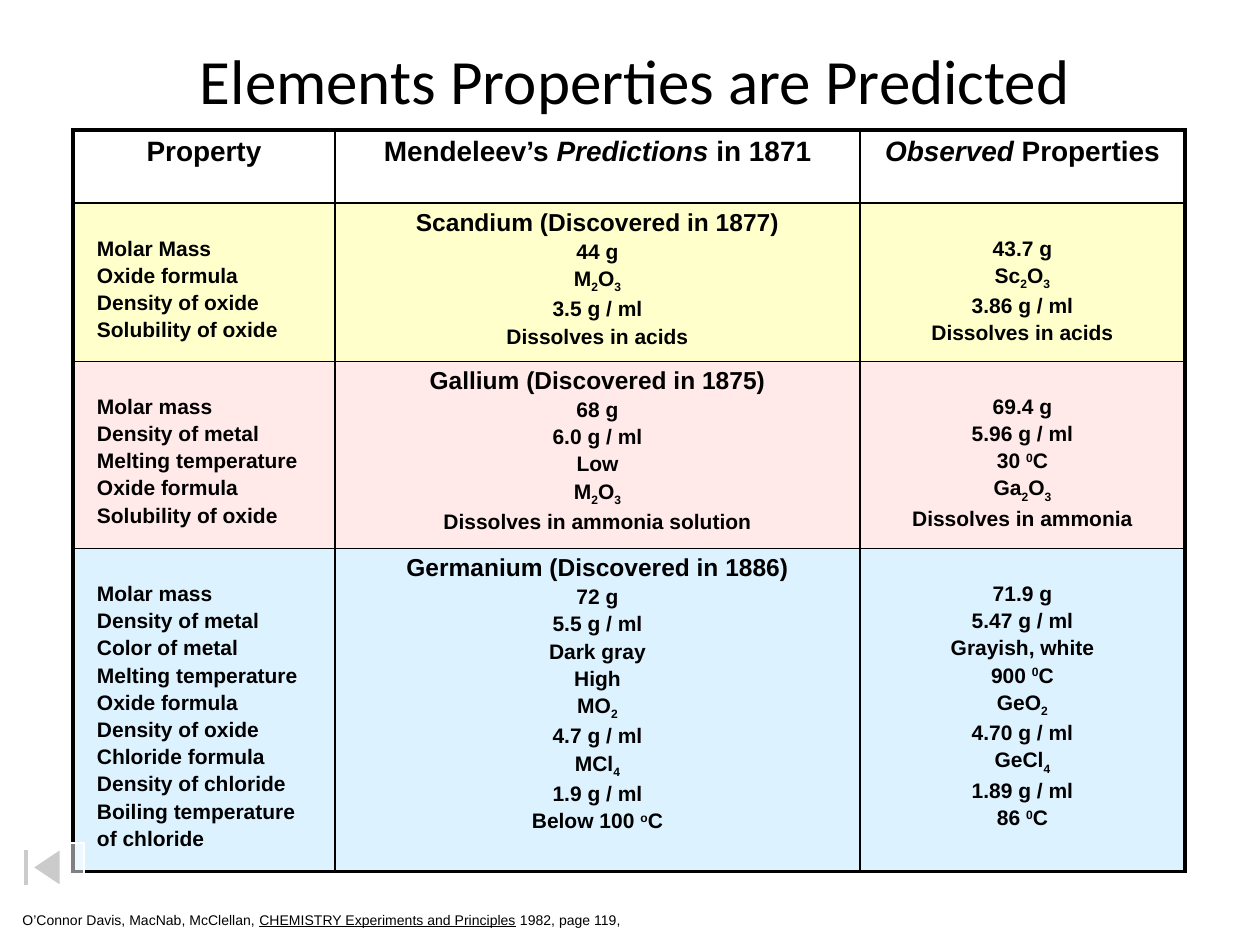
from dataclasses import dataclass
from itertools import groupby

from lxml.etree import SubElement
from pptx import Presentation
from pptx.dml.color import RGBColor
from pptx.enum.shapes import MSO_SHAPE as Preset
from pptx.enum.text import MSO_ANCHOR as Anchor, PP_ALIGN as Align
from pptx.oxml.ns import qn
from pptx.util import Pt

PX = 914400 // 126
COLORS = {
    "ink": "000000",
    "paper": "FFFFFF",
    "scandium": "FFFFCC",
    "gallium": "FFE9E9",
    "germanium": "DDF2FF",
}
BASELINES = {"_": "-25000", "^": "30000"}
COLUMN_WIDTHS = (262, 525, 325)
HEADER_HEIGHT = 73
HEADINGS = ("Property", "Mendeleev’s *Predictions* in 1871", "*Observed* Properties")
OUTER_RULE, INNER_RULE = Pt(2.25), Pt(1)
CELL_TOP, BELOW_HEADING, PROPERTY_INDENT = 6, 34, 24


@dataclass(frozen=True)
class Element:
    heading: str
    color: str
    height: int
    properties: tuple[str, ...]
    predicted: tuple[str, ...]
    observed: tuple[str, ...]


ELEMENTS = (
    Element(
        "Scandium (Discovered in 1877)", "scandium", 155,
        ("Molar Mass", "Oxide formula", "Density of oxide", "Solubility of oxide"),
        ("44 g", "M_2O_3", "3.5 g / ml", "Dissolves in acids"),
        ("43.7 g", "Sc_2O_3", "3.86 g / ml", "Dissolves in acids"),
    ),
    Element(
        "Gallium (Discovered in 1875)", "gallium", 182,
        ("Molar mass", "Density of metal", "Melting temperature", "Oxide formula",
         "Solubility of oxide"),
        ("68 g", "6.0 g / ml", "Low", "M_2O_3", "Dissolves in ammonia solution"),
        ("69.4 g", "5.96 g / ml", "30 ^0C", "Ga_2O_3", "Dissolves in ammonia"),
    ),
    Element(
        "Germanium (Discovered in 1886)", "germanium", 313,
        ("Molar mass", "Density of metal", "Color of metal", "Melting temperature",
         "Oxide formula", "Density of oxide", "Chloride formula",
         "Density of chloride", "Boiling temperature", "of chloride"),
        ("72 g", "5.5 g / ml", "Dark gray", "High", "MO_2", "4.7 g / ml", "MCl_4",
         "1.9 g / ml", "Below 100 ^oC"),
        ("71.9 g", "5.47 g / ml", "Grayish, white", "900 ^0C", "GeO_2", "4.70 g / ml",
         "GeCl_4", "1.89 g / ml", "86 ^0C"),
    ),
)


def rgb(name: str) -> RGBColor:
    return RGBColor.from_string(COLORS[name])


def styled_chars(markup: str):
    """Yield (char, style); * toggles italic, ~ underline, _ and ^ shift one char."""
    italic = underline = False
    shift = None
    for char in markup:
        if char == "*":
            italic = not italic
        elif char == "~":
            underline = not underline
        elif char in BASELINES:
            shift = BASELINES[char]
        else:
            yield char, (italic, underline, shift)
            shift = None


def write_line(paragraph, markup: str, size: int, font: str = "Arial",
               bold: bool = False, align=Align.LEFT) -> None:
    paragraph.alignment = align
    for style, chars in groupby(styled_chars(markup), key=lambda pair: pair[1]):
        italic, underline, shift = style
        run = paragraph.add_run()
        run.text = "".join(char for char, _ in chars)
        run.font.name, run.font.size, run.font.bold = font, Pt(size), bold
        run.font.italic, run.font.underline = italic, underline
        run.font.color.rgb = rgb("ink")
        if shift:
            run._r.get_or_add_rPr().set("baseline", shift)


def write_cell(cell, lines: list[tuple[str, int]], top: int = CELL_TOP,
               align=Align.CENTER) -> None:
    cell.margin_top, cell.margin_bottom = top * PX, 4 * PX
    frame = cell.text_frame
    for index, (markup, size) in enumerate(lines):
        paragraph = frame.add_paragraph() if index else frame.paragraphs[0]
        if index:
            paragraph.space_before = Pt(2.1)
        write_line(paragraph, markup, size, bold=True, align=align)


def finish_cell(cell, color: str, outer_sides: dict[str, bool]) -> None:
    """Draw the four rules, heavy on the table's edge, then fill the cell."""
    properties = cell._tc.get_or_add_tcPr()
    for side, is_outer in outer_sides.items():
        rule = SubElement(properties, qn(f"a:ln{side}"),
                          w=str(OUTER_RULE if is_outer else INNER_RULE))
        ink = SubElement(rule, qn("a:solidFill"))
        SubElement(ink, qn("a:srgbClr"), val=COLORS["ink"])
    cell.fill.solid()
    cell.fill.fore_color.rgb = rgb(color)


def add_line_box(slide, box: tuple[int, ...], markup: str, size: int, font: str,
                 align, anchor, wrap: bool) -> None:
    frame = slide.shapes.add_textbox(*(length * PX for length in box)).text_frame
    frame.word_wrap, frame.vertical_anchor = wrap, anchor
    write_line(frame.paragraphs[0], markup, size, font, align=align)


def add_element_table(slide) -> None:
    heights = (HEADER_HEIGHT, *(element.height for element in ELEMENTS))
    table = slide.shapes.add_table(
        len(heights), len(COLUMN_WIDTHS), 73 * PX, 130 * PX,
        sum(COLUMN_WIDTHS) * PX, sum(heights) * PX).table
    for column, width in zip(table.columns, COLUMN_WIDTHS):
        column.width = width * PX
    for row, height in zip(table.rows, heights):
        row.height = height * PX

    for column, heading in enumerate(HEADINGS):
        write_cell(table.cell(0, column), [(heading, 16)])
    for row, element in enumerate(ELEMENTS, start=1):
        properties, predicted, observed = (
            [(line, 12) for line in lines]
            for lines in (element.properties, element.predicted, element.observed))
        property_cell = table.cell(row, 0)
        property_cell.margin_left = PROPERTY_INDENT * PX
        write_cell(property_cell, properties, BELOW_HEADING, Align.LEFT)
        write_cell(table.cell(row, 1), [(element.heading, 14), *predicted])
        write_cell(table.cell(row, 2), observed, BELOW_HEADING)

    fills = ("paper", *(element.color for element in ELEMENTS))
    last_row, last_column = len(heights) - 1, len(COLUMN_WIDTHS) - 1
    for row, color in enumerate(fills):
        for column in range(len(COLUMN_WIDTHS)):
            finish_cell(table.cell(row, column), color, {
                "L": column == 0, "R": column == last_column,
                "T": row == 0, "B": row == last_row})


def add_beginning_button(slide) -> None:
    button = slide.shapes.add_shape(
        Preset.ACTION_BUTTON_BEGINNING, 0, 843 * PX, 84 * PX, 49 * PX)
    button.shadow.inherit = False
    button.fill.solid()
    button.fill.fore_color.rgb = rgb("paper")
    tint = button._element.spPr.find(qn("a:solidFill"))[0]
    SubElement(tint, qn("a:alpha"), val="50000")
    button.line.color.rgb = rgb("paper")
    button.line.width = Pt(0.75)


def main() -> None:
    deck = Presentation()
    deck.slide_width, deck.slide_height = 1260 * PX, 945 * PX
    slide = deck.slides.add_slide(deck.slide_layouts[6])
    add_line_box(slide, (73, 0, 1124, 158), "Elements Properties are Predicted",
                 36, "Calibri", Align.CENTER, Anchor.MIDDLE, True)
    add_element_table(slide)
    add_line_box(slide, (10, 905, 636, 29),
                 "O’Connor Davis, MacNab, McClellan, "
                 "~CHEMISTRY Experiments and Principles~ 1982, page 119,",
                 8, "Arial", Align.LEFT, Anchor.TOP, False)
    add_beginning_button(slide)
    deck.save("out.pptx")


if __name__ == "__main__":
    main()
